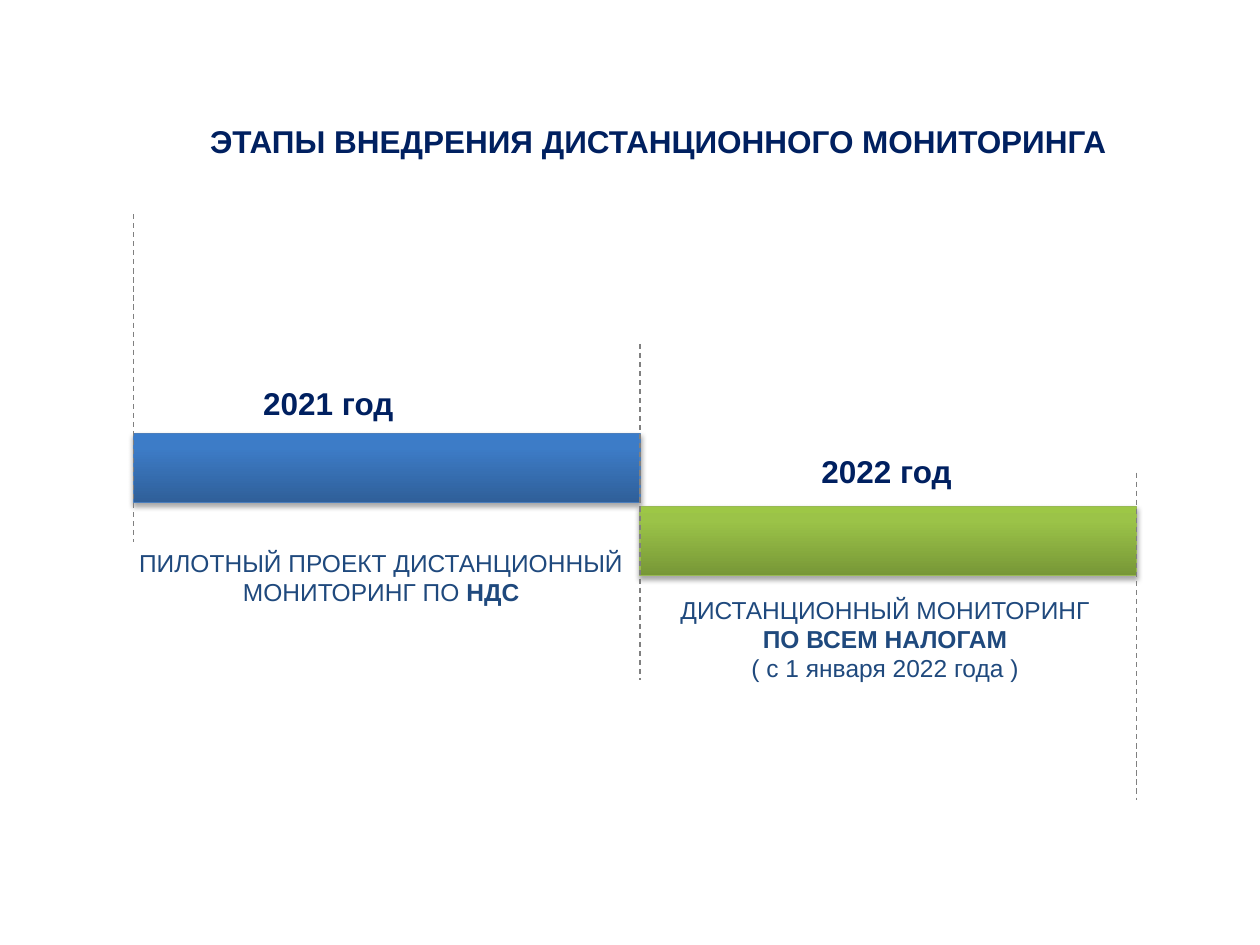
from collections import namedtuple

from lxml.etree import SubElement
from pptx import Presentation
from pptx.dml.color import RGBColor
from pptx.enum.dml import MSO_LINE
from pptx.enum.shapes import MSO_CONNECTOR, MSO_SHAPE
from pptx.enum.text import MSO_ANCHOR as ANCHOR, MSO_AUTO_SIZE as AUTO, PP_ALIGN as ALIGN
from pptx.oxml.ns import qn
from pptx.util import Inches, Pt

COLORS = {
    "heading": "002060", "body": "1F497D", "divider": "808080", "shadow": "000000",
    "blue_line": "4B7EBC", "green_line": "98B955",
}
# Gradient stops from the bottom of a bar to its top
BLUE = [(0, "2F5F99"), (80, "3D7CC7"), (100, "3A7CCB")]
GREEN = [(0, "779737"), (80, "9BC348"), (100, "9DC746")]

# Grid of 100 columns by 75 rows on the slide
COLUMNS, ROWS = 100, 75
WIDTH, HEIGHT = Inches(10), Inches(7.5)
Box = namedtuple("Box", "left top width height")


def x(columns):
    return round(WIDTH * columns / COLUMNS)


def y(rows):
    return round(HEIGHT * rows / ROWS)


def place(box):
    return x(box.left), y(box.top), x(box.width), y(box.height)


def add_text(slide, box, lines, *, size, color, bold=False, align=ALIGN.CENTER,
             anchor=ANCHOR.TOP, wrap=True, grow=True, indent=0):
    """Each line is a list of (text, emphasised) runs."""
    label = slide.shapes.add_textbox(*place(box))
    frame = label.text_frame
    frame.word_wrap = wrap
    frame.auto_size = AUTO.SHAPE_TO_FIT_TEXT if grow else AUTO.NONE
    frame.vertical_anchor = anchor
    for number, line in enumerate(lines):
        paragraph = frame.paragraphs[0] if number == 0 else frame.add_paragraph()
        paragraph.alignment = align
        if indent:
            properties = paragraph._p.get_or_add_pPr()
            properties.set("marL", str(x(indent)))
            properties.set("indent", "0")
        for text, emphasised in line:
            run = paragraph.add_run()
            run.text = text
            run.font.name = "Arial"
            run.font.size = Pt(size)
            run.font.bold = bold or emphasised
            run.font.color.rgb = RGBColor.from_string(COLORS[color])


def add_color(parent, value):
    return SubElement(parent, qn("a:srgbClr"), val=value)


def add_bar(slide, box, stops, line):
    bar = slide.shapes.add_shape(MSO_SHAPE.RECTANGLE, *place(box))
    bar.line.color.rgb = RGBColor.from_string(COLORS[line])
    bar.line.width = Pt(0.75)

    # Three-stop vertical gradient
    bar.fill.gradient()
    bar.fill.gradient_angle = 90
    properties = bar._element.spPr
    stop_list = properties.find(".//" + qn("a:gsLst"))
    stop_list.clear()
    for position, value in stops:
        add_color(SubElement(stop_list, qn("a:gs"), pos=str(position * 1000)), value)

    # Soft shadow straight below
    bar.shadow.inherit = False
    shadow = SubElement(properties.find(qn("a:effectLst")), qn("a:outerShdw"),
                        blurRad=str(Pt(3.1)), dist=str(Pt(1.8)),
                        dir="5400000", rotWithShape="0")
    SubElement(add_color(shadow, COLORS["shadow"]), qn("a:alpha"), val="35000")


def add_title(slide, box):
    add_text(slide, box, [[("ЭТАПЫ ВНЕДРЕНИЯ ДИСТАНЦИОННОГО МОНИТОРИНГА", True)]],
             size=18, color="heading", anchor=ANCHOR.MIDDLE, grow=False, indent=3.9)


def add_phase(slide, box, *, year, year_shift, bar_drop, stops, line,
              description, description_box):
    """Year above a bar, description below; offsets count from the box corner."""
    # Description
    add_text(slide, description_box._replace(left=box.left + description_box.left,
                                             top=box.top + description_box.top),
             description, size=14, color="body")
    # Bar
    add_bar(slide, Box(box.left, box.top + bar_drop, box.width, 5.5), stops, line)
    # Year
    add_text(slide, Box(box.left + year_shift, box.top, 12.5, 4), [[(year, True)]],
             size=18, color="heading", align=ALIGN.JUSTIFY, wrap=False)


def add_divider(slide, column, top, bottom):
    divider = slide.shapes.add_connector(MSO_CONNECTOR.STRAIGHT,
                                         x(column), y(top), x(column), y(bottom))
    divider.line.color.rgb = RGBColor.from_string(COLORS["divider"])
    divider.line.width = Pt(0.75)
    divider.line.dash_style = MSO_LINE.DASH
    SubElement(divider._element.spPr, qn("a:effectLst"))


def main():
    deck = Presentation()
    deck.slide_width, deck.slide_height = WIDTH, HEIGHT
    slide = deck.slides.add_slide(deck.slide_layouts[6])

    start, middle, end = 10.6, 50.8, 90.2
    add_title(slide, Box(10.4, 8.4, 79.8, 5.5))

    # Pilot phase
    add_phase(slide, Box(start, 30, middle - start, 18.7),
              year="2021 год", year_shift=9.3, bar_drop=4.4,
              stops=BLUE, line="blue_line",
              description=[[("ПИЛОТНЫЙ ПРОЕКТ ДИСТАНЦИОННЫЙ", False)],
                           [("МОНИТОРИНГ ПО", False), (" НДС", True)]],
              description_box=Box(-0.8, 13, 40.9, 5.7))

    # Full rollout
    add_phase(slide, Box(middle, 35.4, end - middle, 19.4),
              year="2022 год", year_shift=13.4, bar_drop=4.8,
              stops=GREEN, line="green_line",
              description=[[("ДИСТАНЦИОННЫЙ МОНИТОРИНГ", False)],
                           [("ПО ВСЕМ НАЛОГАМ", True)],
                           [("( с 1 января 2022 года )", False)]],
              description_box=Box(1.6, 11.3, 35.7, 8.1))

    # Phase boundaries
    for column, top, bottom in [(middle, 27.3, 54), (start, 17, 43), (end, 37.5, 63.5)]:
        add_divider(slide, column, top, bottom)

    deck.save("out.pptx")


if __name__ == "__main__":
    main()
